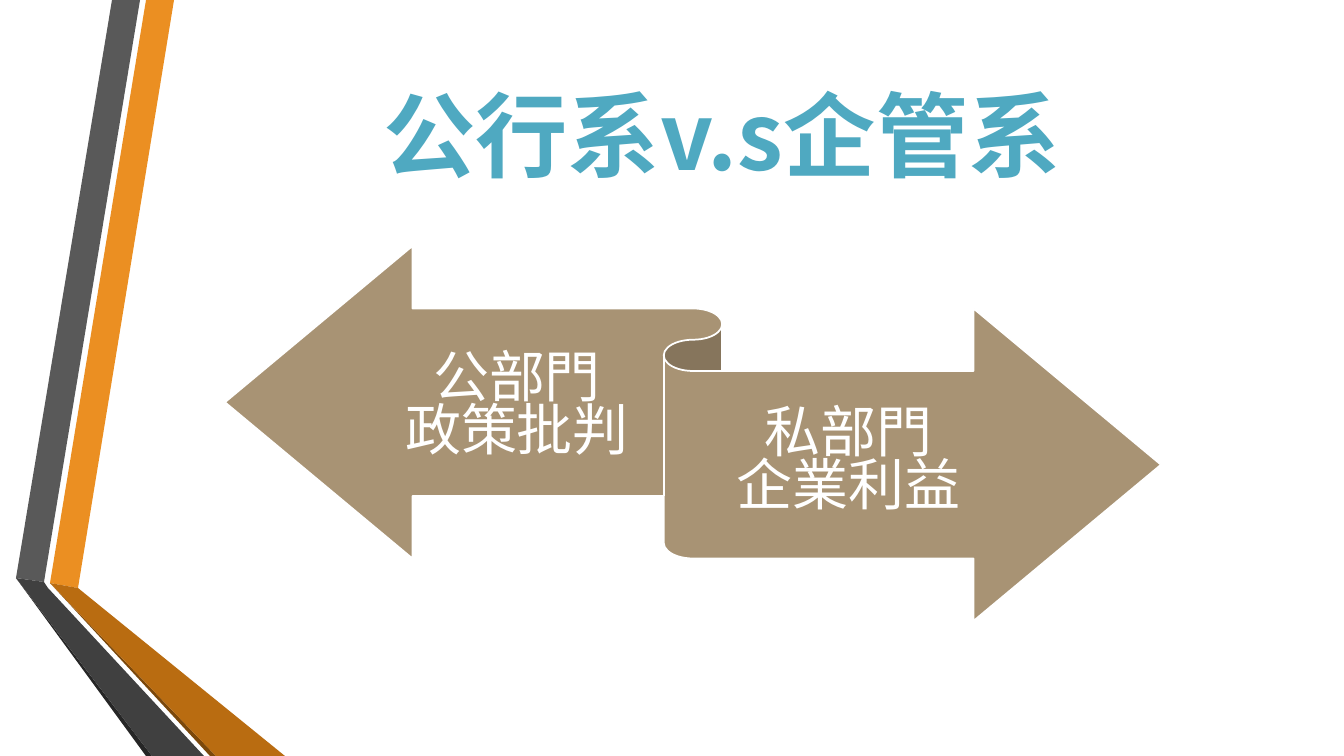
from lxml import etree
from pptx import Presentation
from pptx import util as u
from pptx.dml.color import RGBColor
from pptx.enum import shapes, text
from pptx.oxml.ns import qn

# Content, lengths in px
FACE = "Noto Sans CJK SC"
SIZE = (1344, 756)
TITLE = ("公行系v.s企管系", (314, 73, 816, 122))
RIBBON = (225, 246, 936, 375)
SIDES = [
    (("公部門", "政策批判"), (315, 323, 404, 183)),
    (("私部門", "企業利益"), (666, 378, 365, 183)),
]
BANDS = [
    ("EB8F22", [(50, 583), (78, 588), (174, 0), (146, 0)]),
    ("595959", [(140, 0), (112, 0), (16, 578), (44, 582)]),
    ("262626", [(16, 578), (146, 756), (152, 756)]),
    ("7B480B", [(50, 583), (210, 756), (216, 756)]),
    ("B96C11", [(50, 583), (216, 756), (285, 756), (78, 588)]),
    ("404040", [(16, 578), (152, 756), (204, 756), (48, 588), (44, 582)]),
]
PX = 12192000 / SIZE[0]


def px(n):
    return u.Emu(round(n * PX))


def rgb(code):
    return RGBColor.from_string(code)


def put(obj, form):
    for name, val in form.items():
        setattr(obj, name, val)


def place(shape, box):
    put(shape, dict(zip(("left", "top", "width", "height"), map(px, box))))


def paint(shape, code):
    shape.shadow.inherit = False
    shape.fill.solid()
    shape.fill.fore_color.rgb = rgb(code)


def write(para, words, size, code, bold=False):
    para.alignment = text.PP_ALIGN.CENTER
    run = para.add_run()
    run.text = words
    put(run.font, {"size": u.Pt(size), "bold": bold, "name": FACE})
    run.font.color.rgb = rgb(code)
    east = etree.SubElement(run.font._element, qn("a:ea"))
    east.set("typeface", FACE)


def space(para):
    put(para, {"line_spacing": 0.5, "space_after": u.Pt(0)})
    after = para._p.pPr.find(qn("a:spcAft"))
    after.remove(after[0])
    etree.SubElement(after, qn("a:spcPct")).set("val", "35000")


prs = Presentation()
put(prs, {"slide_width": px(SIZE[0]), "slide_height": px(SIZE[1])})
slide = prs.slides.add_slide(prs.slide_layouts[5])

# Folded bands at the left edge
for code, dots in BANDS:
    pen = slide.shapes.build_freeform(*dots[0], scale=PX)
    pen.add_line_segments(dots[1:], close=True)
    band = pen.convert_to_shape()
    paint(band, code)
    band.line.fill.background()

# Two-way ribbon
ribbon = slide.shapes.add_shape(
    shapes.MSO_SHAPE.LEFT_RIGHT_RIBBON, *map(px, RIBBON))
paint(ribbon, "A89374")
ribbon.line.color.rgb = rgb("FFFFFF")
ribbon.line.width = u.Pt(1.25)

# Labels on the ribbon
for lines, box in SIDES:
    frame = slide.shapes.add_textbox(*map(px, box)).text_frame
    put(frame, {"word_wrap": True, "vertical_anchor": text.MSO_ANCHOR.MIDDLE,
                "margin_left": 0, "margin_right": 0,
                "margin_top": px(16), "margin_bottom": px(17)})
    for i, words in enumerate(lines):
        para = frame.add_paragraph() if i else frame.paragraphs[0]
        write(para, words, 40, "FFFFFF")
        space(para)

# Title
words, box = TITLE
head = slide.shapes.title
place(head, box)
put(head.text_frame, {"word_wrap": True, "auto_size": text.MSO_AUTO_SIZE.NONE,
                      "vertical_anchor": text.MSO_ANCHOR.MIDDLE})
write(head.text_frame.paragraphs[0], words, 66, "4FA9C1", True)

prs.save("out.pptx")
